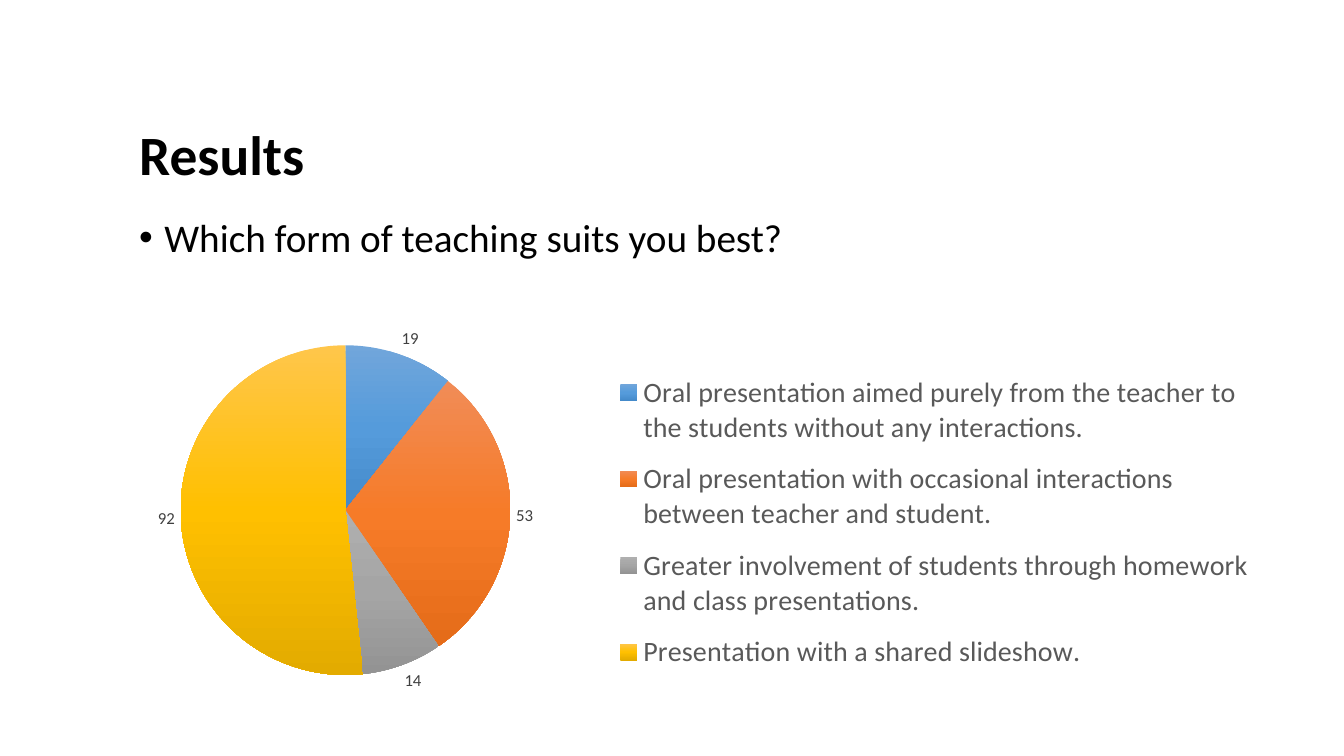
from copy import deepcopy

from lxml.etree import SubElement
from pptx import Presentation
from pptx.chart.data import CategoryChartData
from pptx.dml.color import RGBColor
from pptx.enum.chart import XL_CHART_TYPE, XL_LABEL_POSITION, XL_LEGEND_POSITION
from pptx.enum.text import MSO_ANCHOR, MSO_AUTO_SIZE, PP_ALIGN
from pptx.oxml.ns import qn
from pptx.util import Pt

EMU_PER_PX = 9525
FONT = "Calibri"
PIE_BOX = (146, 291, 1068, 395)
ANSWERS = [
    ("Oral presentation aimed purely from the teacher to the students without any interactions.",
     19, ("71A6DB", "559BDB", "448ACA")),
    ("Oral presentation with occasional interactions between teacher and student.",
     53, ("F18C57", "F67B28", "E56C19")),
    ("Greater involvement of students through homework and class presentations.",
     14, ("AFAFAF", "A5A5A5", "939393")),
    ("Presentation with a shared slideshow.",
     92, ("FFC64B", "FFC000", "E3AB00")),
]


def px(length):
    """Turn pixels into EMU."""
    return length * EMU_PER_PX


def rgb(code):
    """Turn a hex string into a colour."""
    return RGBColor.from_string(code)


def style_font(font, size, color, bold=False):
    """Set the face, size, colour and weight of a font."""
    font.name = FONT
    font.size = Pt(size)
    font.bold = bold
    font.color.rgb = rgb(color)


def fill_placeholder(placeholder, box, text, size, anchor, bold=False):
    """Move a placeholder, write its one paragraph and return that paragraph."""
    placeholder.left, placeholder.top, placeholder.width, placeholder.height = map(px, box)
    frame = placeholder.text_frame
    frame.text = text
    frame.word_wrap = True
    frame.auto_size = MSO_AUTO_SIZE.NONE
    frame.vertical_anchor = anchor
    paragraph = frame.paragraphs[0]
    paragraph.alignment = PP_ALIGN.LEFT
    paragraph.line_spacing = 0.9
    paragraph.space_before = Pt(0)
    style_font(paragraph.runs[0].font, size, "000000", bold)
    return paragraph


def add_bullet(paragraph, indent):
    """Give a paragraph a round bullet with a hanging indent."""
    properties = paragraph._p.get_or_add_pPr()
    properties.set("marL", str(px(indent)))
    properties.set("indent", str(-px(indent)))
    SubElement(properties, qn("a:buFont"), typeface="Arial")
    SubElement(properties, qn("a:buChar"), char="•")


def place_part(part, index, box, inner=False):
    """Fix a chart part at a box of pixels inside the chart."""
    for automatic in part.findall(qn("c:layout")):
        part.remove(automatic)
    layout = SubElement(part, qn("c:layout"))
    part.insert(index, layout)
    manual = SubElement(layout, qn("c:manualLayout"))
    if inner:
        SubElement(manual, qn("c:layoutTarget"), val="inner")
    for mode in ("xMode", "yMode"):
        SubElement(manual, qn(f"c:{mode}"), val="edge")
    for side, length, whole in zip("xywh", box, PIE_BOX[2:] * 2):
        SubElement(manual, qn(f"c:{side}"), val=str(length / whole))


def shade_slice(chart, index, colors):
    """Shade one slice from top to bottom through three colours."""
    fill = chart.plots[0].series[0].points[index].format.fill
    fill.gradient()
    fill.gradient_angle = 270
    stop_list = chart._chartSpace.xpath(".//c:dPt//a:gsLst")[index]
    stop_list.append(deepcopy(stop_list[0]))
    for stop, position, color in zip(fill.gradient_stops, (0, 0.5, 1), colors):
        stop.position = position
        stop.color.rgb = rgb(color)


def add_answer_pie(slide):
    """Add the pie of answers with value labels and a legend."""
    names, counts, shades = zip(*ANSWERS)
    answers = CategoryChartData()
    answers.categories = names
    answers.add_series("Series 1", counts)
    chart = slide.shapes.add_chart(XL_CHART_TYPE.PIE, *map(px, PIE_BOX), answers).chart
    style_font(chart.font, 10, "000000")
    chart.has_title = False
    chart.has_legend = True
    legend = chart.legend
    legend.position = XL_LEGEND_POSITION.RIGHT
    legend.include_in_layout = False
    style_font(legend.font, 20, "595959")
    plot = chart.plots[0]
    plot.vary_by_categories = True
    plot.has_data_labels = True
    labels = plot.data_labels
    labels.show_value = True
    labels.show_percentage = False
    labels.position = XL_LABEL_POSITION.OUTSIDE_END
    style_font(labels.font, 12, "404040")
    for index, colors in enumerate(shades):
        shade_slice(chart, index, colors)
    place_part(chart._chartSpace.chart.plotArea, 0, (26, 36, 314, 318), inner=True)
    place_part(legend._element, 1, (439, 50, 610, 313))


def main():
    """Build and save the results slide."""
    deck = Presentation()
    deck.slide_width, deck.slide_height = px(1280), px(720)
    slide = deck.slides.add_slide(deck.slide_layouts[1])
    heading, question = slide.placeholders
    fill_placeholder(heading, (123, 115, 1104, 70), "Results", 39.6, MSO_ANCHOR.MIDDLE, bold=True)
    asked = fill_placeholder(question, (123, 203, 1141, 412),
                             "Which form of teaching suits you best?", 28, MSO_ANCHOR.TOP)
    add_bullet(asked, 24)
    add_answer_pie(slide)
    deck.save("out.pptx")


if __name__ == "__main__":
    main()
